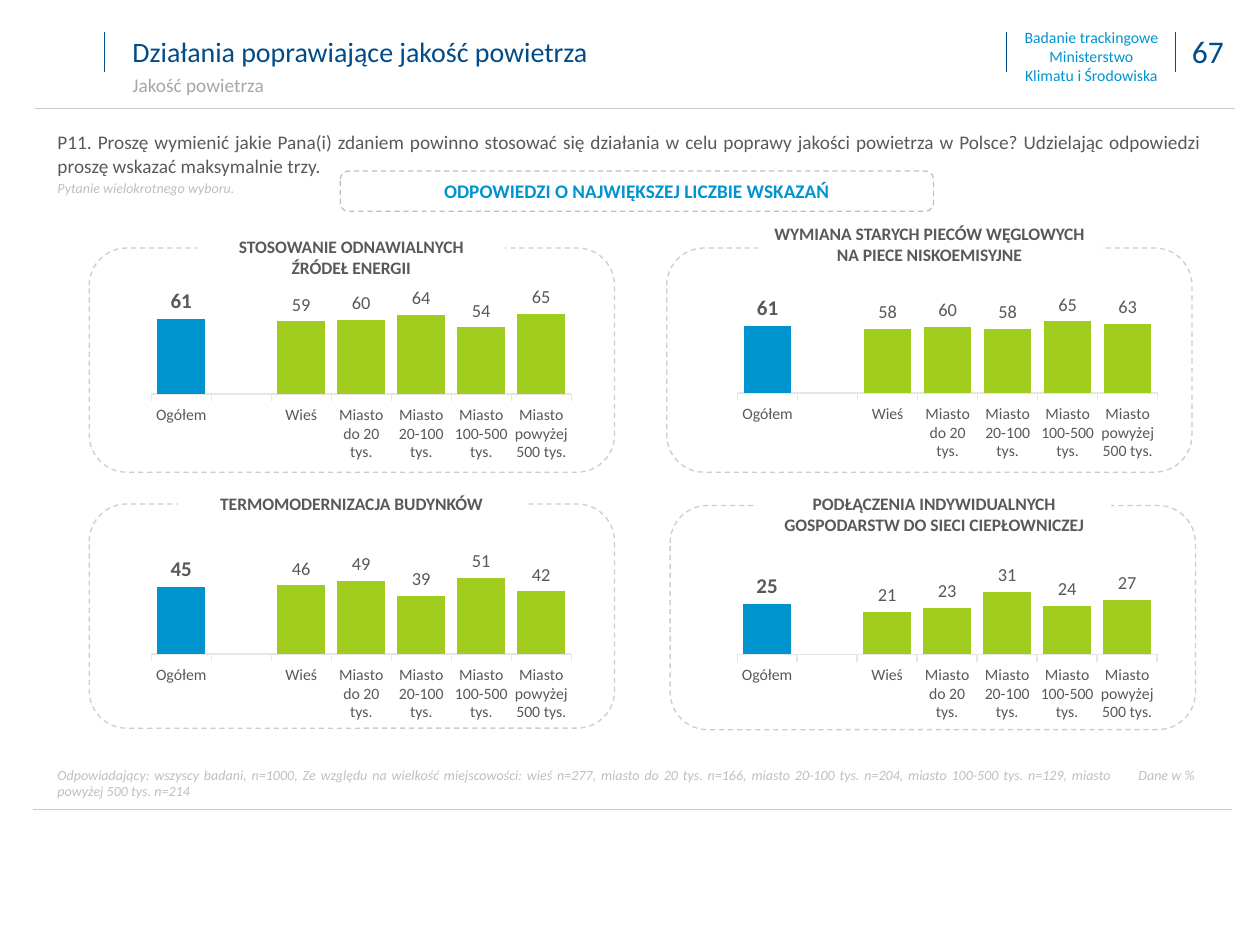
import pptx
import pptx.util
import pptx.dml.color
import pptx.chart.data
import pptx.enum.chart
import pptx.enum.dml
import pptx.enum.shapes
import pptx.enum.text
import lxml.etree

Cm, Pt = pptx.util.Cm, pptx.util.Pt
ALIGN = pptx.enum.text.PP_ALIGN
ANCHOR = pptx.enum.text.MSO_ANCHOR
SHAPE = pptx.enum.shapes.MSO_SHAPE
FONT = "Calibri"
NAVY, BLUE, GREEN = "004B88", "0094CF", "A0CC1E"
DARK, PALE, RULE = "595959", "BFBFBF", "CBCBCB"

CATS = ["Ogółem", "", "Wieś", "Miasto do 20 tys.", "Miasto 20-100 tys.",
        "Miasto 100-500 tys.", "Miasto powyżej 500 tys."]
PANEL = (10.59, 4.52)
# Frame corner; heading and chart boxes relative to it; plot top and height; axis top
PANELS = [
    dict(at=(1.8, 5), name="STOSOWANIE ODNAWIALNYCH ŹRÓDEŁ ENERGII",
         head=(2.18, -0.38, 6.2, 1.12), plot=(0.05, 0.23, 9.68, 4.34),
         inner=(0.225, 0.4), top=70, vals=[61, None, 59, 60, 64, 54, 65]),
    dict(at=(13.44, 5), name="WYMIANA STARYCH PIECÓW WĘGLOWYCH NA PIECE NISKOEMISYJNE",
         head=(1.83, -0.64, 6.93, 1.12), plot=(0.23, -0.33, 9.68, 5.21),
         inner=(0.326, 0.299), top=70, vals=[61, None, 58, 60, 58, 65, 63]),
    dict(at=(1.8, 10.16), name="TERMOMODERNIZACJA BUDYNKÓW",
         head=(1.78, -0.36, 7.01, 0.69), plot=(0.05, 0.2, 9.68, 4.52),
         inner=(0.225, 0.4), top=60, vals=[45, None, 46, 49, 39, 51, 42]),
    dict(at=(13.51, 10.19), name="PODŁĄCZENIA INDYWIDUALNYCH GOSPODARSTW DO SIECI CIEPŁOWNICZEJ",
         head=(1.75, -0.38, 7.14, 1.12), plot=(0.15, 0.41, 9.68, 5.21),
         inner=(0.225, 0.272), top=35, vals=[25, None, 21, 23, 31, 24, 27]),
]


def rgb(code):
    return pptx.dml.color.RGBColor.from_string(code)


def style(font, size, color, bold=False, italic=False):
    font.name, font.size = FONT, Pt(size)
    font.bold, font.italic = bold, italic
    font.color.rgb = rgb(color)


def write(shape, text, size=11, color=DARK, bold=False, italic=False,
          align=ALIGN.LEFT, anchor=ANCHOR.TOP, left=0.25, first=True):
    frame = shape.text_frame
    frame.word_wrap = True
    frame.auto_size = pptx.enum.text.MSO_AUTO_SIZE.NONE
    frame.vertical_anchor = anchor
    frame.margin_left = Cm(left)
    for line in text.split("\n"):
        para = frame.paragraphs[0] if first else frame.add_paragraph()
        para.alignment = align
        para.space_before = Pt(0)
        run = para.add_run()
        run.text = line
        style(run.font, size, color, bold, italic)
        first = False
    return para


def label(slide, box, text, **look):
    shape = slide.shapes.add_textbox(*map(Cm, box))
    write(shape, text, **look)
    return shape


def rule(slide, x1, y1, x2, y2, color):
    line = slide.shapes.add_connector(
        pptx.enum.shapes.MSO_CONNECTOR.STRAIGHT, Cm(x1), Cm(y1), Cm(x2), Cm(y2))
    line.line.color.rgb = rgb(color)
    line.line.width = Pt(0.25)
    lxml.etree.SubElement(line._element.spPr, pptx.oxml.ns.qn("a:effectLst"))


def block(slide, kind, box, fill=None, edge=None):
    shape = slide.shapes.add_shape(kind, *map(Cm, box))
    shape.shadow.inherit = False
    if fill:
        shape.fill.solid()
        shape.fill.fore_color.rgb = rgb(fill)
    else:
        shape.fill.background()
    if edge:
        shape.line.color.rgb = rgb(edge)
        shape.line.width = Pt(0.75)
        shape.line.dash_style = pptx.enum.dml.MSO_LINE.DASH
    else:
        shape.line.fill.background()
    return shape


def place(chart, x, y, wide, high):
    """Fix the inner plot area as fractions of the chart."""
    area = chart._chartSpace.chart.plotArea
    for old in area.findall(pptx.oxml.ns.qn("c:layout")):
        area.remove(old)
    parts = [("layoutTarget", "inner"), ("xMode", "edge"), ("yMode", "edge"),
             ("x", x), ("y", y), ("w", wide), ("h", high)]
    body = "".join(f'<c:{tag} val="{val}"/>' for tag, val in parts)
    area.insert(0, pptx.oxml.parse_xml(
        f'<c:layout {pptx.oxml.ns.nsdecls("c")}><c:manualLayout>{body}'
        '</c:manualLayout></c:layout>'))


def bars(slide, box, vals, inner, top):
    enum = pptx.enum.chart
    data = pptx.chart.data.CategoryChartData(number_format="#,##0")
    data.categories = CATS
    data.add_series("Series 1", vals)
    chart = slide.shapes.add_chart(
        enum.XL_CHART_TYPE.COLUMN_CLUSTERED, *map(Cm, box), data).chart
    chart.has_legend = chart.has_title = False
    style(chart.font, 10, DARK)
    place(chart, 0.124, inner[0], 0.875, inner[1])

    # Axes
    axis = chart.value_axis
    axis.minimum_scale, axis.maximum_scale = 0, top
    axis.has_major_gridlines = axis.visible = False
    axis = chart.category_axis
    axis.major_tick_mark = enum.XL_TICK_MARK.OUTSIDE
    axis.format.line.color.rgb = rgb("E6E6E6")
    axis.format.line.width = Pt(0.75)
    style(axis.tick_labels.font, 9, DARK)

    # Columns and their values
    plot = chart.plots[0]
    plot.gap_width, plot.overlap, plot.vary_by_categories = 26, -10, False
    series = plot.series[0]
    for num in range(len(CATS)):
        fill = series.points[num].format.fill
        fill.solid()
        fill.fore_color.rgb = rgb(BLUE if num < 2 else GREEN)
    tags = series.data_labels
    tags.show_value = True
    tags.number_format, tags.number_format_is_linked = "#,##0", False
    tags.position = enum.XL_LABEL_POSITION.OUTSIDE_END
    style(tags.font, 10.5, DARK)
    total = series.points[0].data_label
    style(total.font, 12, DARK, bold=True)
    total.position = enum.XL_LABEL_POSITION.OUTSIDE_END


def panel(slide, at, name, head, plot, inner, top, vals):
    def shift(box):
        return (at[0] + box[0], at[1] + box[1], *box[2:])

    bars(slide, shift(plot), vals, inner, top)
    block(slide, SHAPE.ROUNDED_RECTANGLE, (*at, *PANEL), edge="CDCDCD")
    title = block(slide, SHAPE.RECTANGLE, shift(head), fill="FFFFFF")
    write(title, name, size=10, bold=True, align=ALIGN.CENTER, anchor=ANCHOR.MIDDLE)


def header(slide, x, y):
    title = slide.shapes.title
    title.left, title.top, title.width, title.height = map(
        Cm, (x + 1.4, y + 0.51, 18.21, 1.04))
    write(title, "Działania poprawiające jakość powietrza", size=16, color=NAVY,
          anchor=ANCHOR.MIDDLE, left=0.56)
    label(slide, (x + 1.4, y + 1.35, 18.16, 0.61), "Jakość powietrza",
          color="A6A6A6", left=0.56)
    label(slide, (x + 19.46, y + 0.43, 3.66, 1.42),
          "Badanie trackingowe\nMinisterstwo\nKlimatu i Środowiska",
          size=9, color=BLUE, align=ALIGN.CENTER)
    label(slide, (x + 22.79, y + 0.53, 1.7, 1.02), "67", size=18, color=NAVY,
          align=ALIGN.CENTER)
    for step in (1.4, 19.58, 22.99):
        rule(slide, x + step, y + 0.64, x + step, y + 1.45, NAVY)
    rule(slide, x, y + 2.18, x + 24.18, y + 2.18, RULE)


def question(slide, x, y):
    box = label(slide, (x, y, 23.57, 3), (
        "P11. Proszę wymienić jakie Pana(i) zdaniem powinno stosować się działania "
        "w celu poprawy jakości powietrza w Polsce? Udzielając odpowiedzi proszę "
        "wskazać maksymalnie trzy."), align=ALIGN.JUSTIFY)
    note = write(box, "Pytanie wielokrotnego wyboru.", size=8, color=PALE,
                 italic=True, first=False)
    note.space_before = Pt(1.6)
    banner = block(slide, SHAPE.ROUNDED_RECTANGLE, (x + 5.95, y + 0.94, 11.96, 0.81),
                   edge=PALE)
    banner.adjustments[0] = 0.2
    write(banner, "ODPOWIEDZI O NAJWIĘKSZEJ LICZBIE WSKAZAŃ", color=BLUE, bold=True,
          align=ALIGN.CENTER, anchor=ANCHOR.MIDDLE)


def footer(slide, x, y):
    look = dict(size=8, color=PALE, italic=True)
    label(slide, (x, y, 21.79, 1.19), (
        "Odpowiadający: wszyscy badani, n=1000, Ze względu na wielkość miejscowości: "
        "wieś n=277, miasto do 20 tys. n=166, miasto 20-100 tys. n=204, "
        "miasto 100-500 tys. n=129, miasto powyżej 500 tys. n=214"),
        align=ALIGN.JUSTIFY, **look)
    label(slide, (x + 21.79, y, 1.78, 0.61), "Dane w %", **look)
    rule(slide, x - 0.25, y + 0.99, x + 23.93, y + 0.99, RULE)


def main():
    deck = pptx.Presentation()
    deck.slide_width, deck.slide_height = Cm(25.4), Cm(19.05)
    slide = deck.slides.add_slide(deck.slide_layouts[5])
    header(slide, 0.71, 0)
    footer(slide, 0.91, 15.32)
    for item in PANELS:
        panel(slide, **item)
    question(slide, 0.91, 2.51)
    deck.save("out.pptx")


if __name__ == "__main__":
    main()
